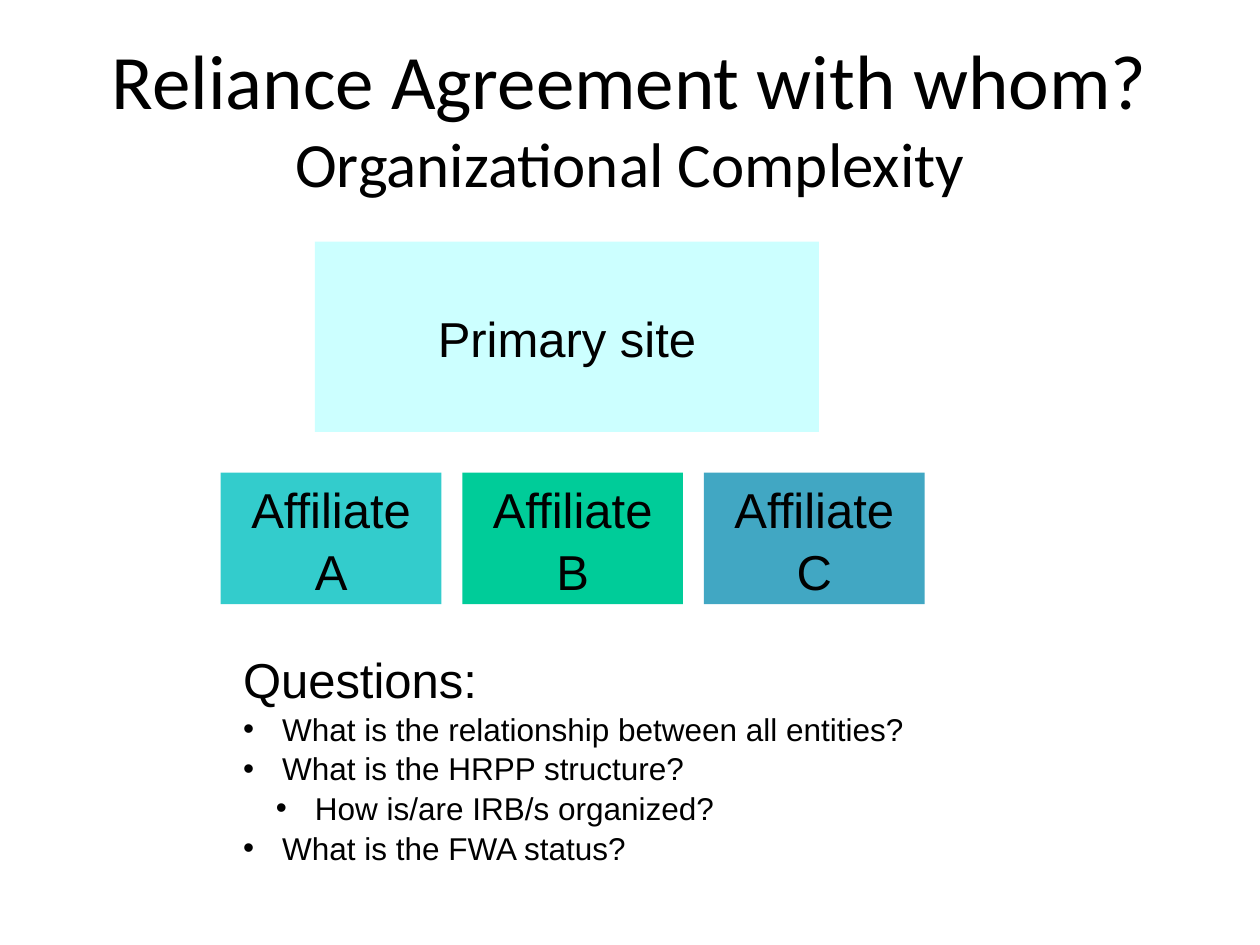
import pptx
import pptx.util
import pptx.dml.color
import pptx.enum.shapes
import pptx.enum.text
from dataclasses import dataclass
from lxml import etree

TITLE_LINES = ["Reliance Agreement with whom?", "Organizational Complexity"]
PRIMARY = "Primary site"
AFFILIATES = [("Affiliate A", "33CCCC"), ("Affiliate B", "00CC99"), ("Affiliate C", "41A7C3")]
QUESTIONS_HEADING = "Questions:"
QUESTIONS = [
    (0, "What is the relationship between all entities?"),
    (0, "What is the HRPP structure?"),
    (1, "How is/are IRB/s organized?"),
    (0, "What is the FWA status?"),
]


@dataclass(frozen=True)
class Theme:
    text: str = "000000"
    primary: str = "CCFFFF"
    title_font: str = "Calibri"
    body_font: str = "Arial"
    title_sizes: tuple = (44, 36)
    box_size: int = 28
    bullet_size: int = 18
    body_spacing: float = 1.05


THEME = Theme()
Cm = pptx.util.Cm
CENTER = pptx.enum.text.PP_ALIGN.CENTER
MIDDLE = pptx.enum.text.MSO_ANCHOR.MIDDLE


def rgb(value):
    return pptx.dml.color.RGBColor.from_string(value)


def style(paragraph, size, font=THEME.body_font, spacing=THEME.body_spacing, alignment=None):
    paragraph.font.size = pptx.util.Pt(size)
    paragraph.font.name = font
    paragraph.font.color.rgb = rgb(THEME.text)
    paragraph.line_spacing = spacing
    paragraph.alignment = alignment


def add_text(slide, left, top, width, height):
    frame = slide.shapes.add_textbox(Cm(left), Cm(top), Cm(width), Cm(height)).text_frame
    frame.word_wrap = True
    return frame


def add_box(slide, text, fill, left, top, width, height):
    shape = slide.shapes.add_shape(
        pptx.enum.shapes.MSO_SHAPE.RECTANGLE, Cm(left), Cm(top), Cm(width), Cm(height))
    shape.shadow.inherit = False
    shape.fill.solid()
    shape.fill.fore_color.rgb = rgb(fill)
    shape.line.fill.background()
    frame = shape.text_frame
    frame.word_wrap = True
    frame.vertical_anchor = MIDDLE
    frame.text = text
    style(frame.paragraphs[0], THEME.box_size, alignment=CENTER)


def add_bullet(paragraph, level, hanging=0.79, step=0.66):
    paragraph.level = level
    properties = paragraph._p.get_or_add_pPr()
    properties.set("marL", str(Cm(hanging + level * step)))
    properties.set("indent", str(-Cm(hanging)))
    namespace = pptx.oxml.ns.qn("a:buFont"), pptx.oxml.ns.qn("a:buChar")
    etree.SubElement(properties, namespace[0]).set("typeface", THEME.body_font)
    etree.SubElement(properties, namespace[1]).set("char", "•")


def add_title(slide):
    frame = add_text(slide, 1.27, 0.76, 22.86, 3.18)
    frame.vertical_anchor = MIDDLE
    paragraph = frame.paragraphs[0]
    style(paragraph, THEME.title_sizes[0], THEME.title_font, 1.0, CENTER)
    for index, (line, size) in enumerate(zip(TITLE_LINES, THEME.title_sizes)):
        if index:
            paragraph.add_line_break()
        run = paragraph.add_run()
        run.text = line
        run.font.size = pptx.util.Pt(size)


def add_questions(slide):
    frame = add_text(slide, 4.65, 12.9, 17.58, 4.52)
    frame.text = QUESTIONS_HEADING
    style(frame.paragraphs[0], THEME.box_size)
    for level, text in QUESTIONS:
        paragraph = frame.add_paragraph()
        paragraph.text = text
        style(paragraph, THEME.bullet_size)
        add_bullet(paragraph, level)


def main():
    presentation = pptx.Presentation()
    presentation.slide_width, presentation.slide_height = Cm(25.4), Cm(19.05)
    slide = presentation.slides.add_slide(presentation.slide_layouts[6])
    add_title(slide)
    add_box(slide, PRIMARY, THEME.primary, 6.35, 4.87, 10.16, 3.84)
    left, width, gap = 4.45, 4.45, 0.42
    for index, (name, fill) in enumerate(AFFILIATES):
        add_box(slide, name, fill, left + index * (width + gap), 9.53, width, 2.65)
    add_questions(slide)
    presentation.save("out.pptx")


if __name__ == "__main__":
    main()
